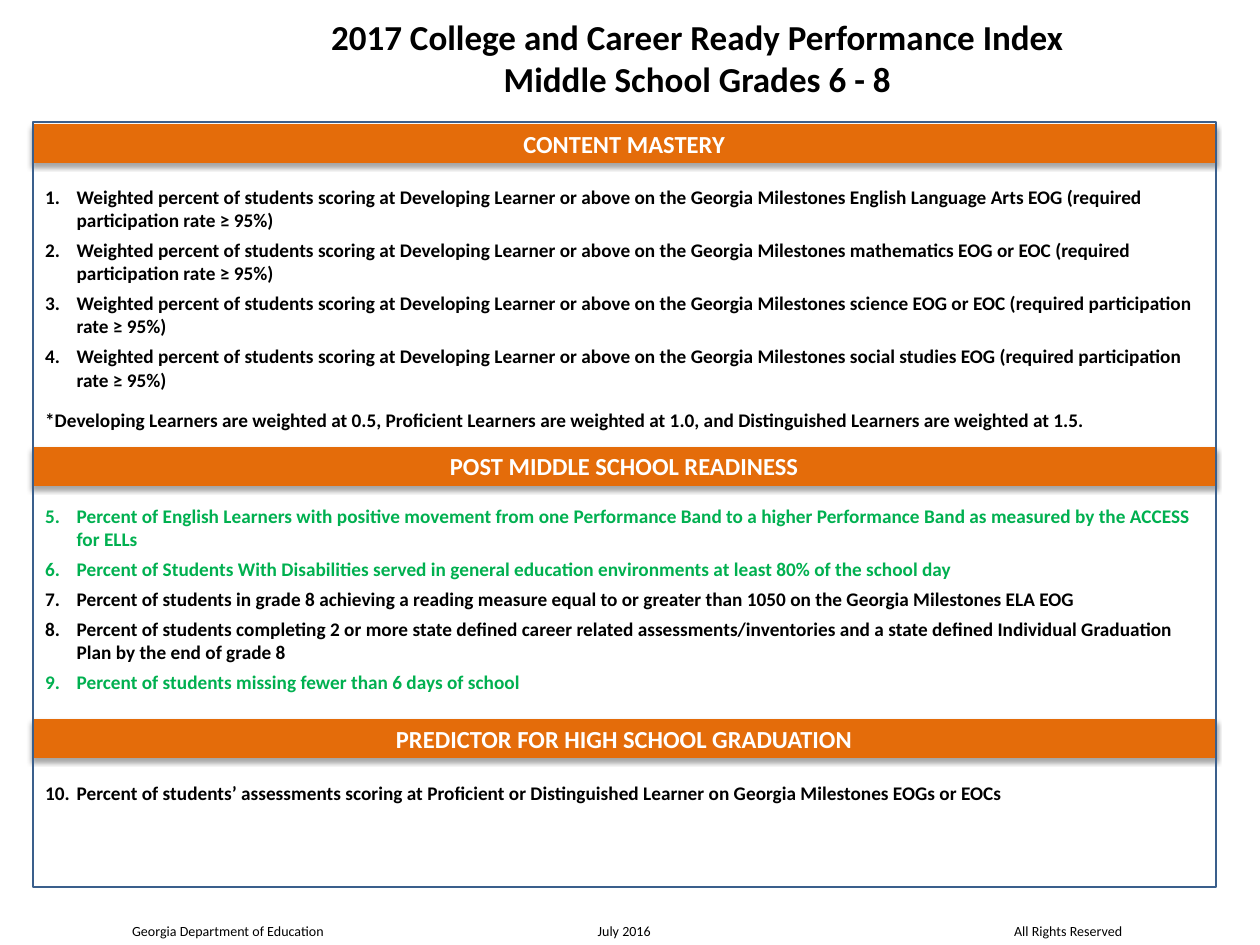
import dataclasses

import lxml.etree
import pptx
import pptx.dml.color
import pptx.enum.shapes
import pptx.enum.text
import pptx.oxml.ns
import pptx.util

Pt = pptx.util.Pt
RGB = pptx.dml.color.RGBColor.from_string
ALIGN = pptx.enum.text.PP_ALIGN
ANCHOR = pptx.enum.text.MSO_ANCHOR
RECT = pptx.enum.shapes.MSO_SHAPE.RECTANGLE
qn = pptx.oxml.ns.qn


@dataclasses.dataclass(frozen=True)
class Theme:
    """Colours, font and type sizes of the slide."""
    font: str = "Calibri"
    ink: str = "000000"
    white: str = "FFFFFF"
    band: str = "E46C0A"
    green: str = "00B050"
    frame: str = "3A5F8C"
    title: float = 20
    heading: float = 14
    body: float = 11
    footer: float = 8


T = Theme()
MILESTONES = "Weighted percent of students scoring at Developing Learner or above on the Georgia Milestones "
RATE = " (required participation rate ≥ 95%)"
SUBJECTS = ["English Language Arts EOG", "mathematics EOG or EOC", "science EOG or EOC", "social studies EOG"]
SECTIONS = [
    ("CONTENT MASTERY", 71.3, 30.9, 1, [(MILESTONES + name + RATE, T.ink) for name in SUBJECTS],
     "*Developing Learners are weighted at 0.5, Proficient Learners are weighted at 1.0, "
     "and Distinguished Learners are weighted at 1.5."),
    ("POST MIDDLE SCHOOL READINESS", 255.6, 28.8, 5, [
        ("Percent of English Learners with positive movement from one Performance Band to a higher "
         "Performance Band as measured by the ACCESS for ELLs", T.green),
        ("Percent of Students With Disabilities served in general education environments "
         "at least 80% of the school day", T.green),
        ("Percent of students in grade 8 achieving a reading measure equal to or greater than 1050 "
         "on the Georgia Milestones ELA EOG", T.ink),
        ("Percent of students completing 2 or more state defined career related assessments/inventories "
         "and a state defined Individual Graduation Plan by the end of grade 8", T.ink),
        ("Percent of students missing fewer than 6 days of school", T.green)], None),
    ("PREDICTOR FOR HIGH SCHOOL GRADUATION", 411.1, 31.7, 10, [
        ("Percent of students’ assessments scoring at Proficient or Distinguished Learner "
         "on Georgia Milestones EOGs or EOCs", T.ink)], None),
]


def add_run(p, text, size, color, bold=True):
    """Add one formatted run to a paragraph."""
    r = p.add_run()
    r.text = text
    r.font.name, r.font.size, r.font.bold = T.font, Pt(size), bold
    r.font.color.rgb = RGB(color)


def add_title(s, lines, x, y, w, h):
    """Place the title placeholder in its box."""
    sp = s.shapes.title
    sp.left, sp.top, sp.width, sp.height = Pt(x), Pt(y), Pt(w), Pt(h)
    tf = sp.text_frame
    tf.auto_size = pptx.enum.text.MSO_AUTO_SIZE.NONE
    tf.vertical_anchor = ANCHOR.MIDDLE
    p = tf.paragraphs[0]
    p.alignment = ALIGN.CENTER
    for i, line in enumerate(lines):
        if i:
            p.add_line_break()
        add_run(p, line, T.title, T.ink)


def add_rect(s, x, y, w, h, line, weight):
    """Add an unfilled, shadowless rectangle."""
    sp = s.shapes.add_shape(RECT, Pt(x), Pt(y), Pt(w), Pt(h))
    sp.shadow.inherit = False
    sp.fill.background()
    sp.line.color.rgb = RGB(line)
    sp.line.width = Pt(weight)
    return sp


def add_band(s, heading, x, y, w, h):
    """Add a heading band with a soft shadow below it."""
    sp = add_rect(s, x, y, w, h, T.band, 0.75)
    sp.fill.solid()
    sp.fill.fore_color.rgb = RGB(T.band)
    effects = sp.element.spPr.find(qn("a:effectLst"))
    shadow = lxml.etree.SubElement(effects, qn("a:outerShdw"), blurRad=str(Pt(3.1)), dist=str(Pt(1.8)),
                                   dir="5400000", rotWithShape="0")
    color = lxml.etree.SubElement(shadow, qn("a:srgbClr"), val=T.ink)
    lxml.etree.SubElement(color, qn("a:alpha"), val="35000")
    tf = sp.text_frame
    tf.vertical_anchor = ANCHOR.MIDDLE
    p = tf.paragraphs[0]
    p.alignment = ALIGN.CENTER
    add_run(p, heading, T.heading, T.white)


def add_items(s, items, start, note, x, y, w, h):
    """Add a numbered list and an optional closing note."""
    tf = s.shapes.add_textbox(Pt(x), Pt(y), Pt(w), Pt(h)).text_frame
    tf.word_wrap = True
    for i, (text, color) in enumerate(items):
        p = tf.add_paragraph() if i else tf.paragraphs[0]
        p.space_after = Pt(4)
        pPr = p._p.get_or_add_pPr()
        pPr.set("marL", str(Pt(18)))
        pPr.set("indent", str(Pt(-18)))
        lxml.etree.SubElement(pPr, qn("a:buFont"), typeface="+mj-lt")
        lxml.etree.SubElement(pPr, qn("a:buAutoNum"), type="arabicPeriod", startAt=str(start))
        add_run(p, text, T.body, color)
    if note:
        p = tf.add_paragraph()
        p.space_before, p.space_after = Pt(6), Pt(4)
        add_run(p, note, T.body, T.ink)


def add_section(s, heading, start, items, note, gap, x, y, w, h):
    """Add a heading band with its list below."""
    add_band(s, heading, x, y, w, 21.6)
    add_items(s, items, start, note, x, y + gap, w + 4, h - gap)


def add_footer(s, parts, x, y, w, h):
    """Add the footer line with left, centre and right parts."""
    tf = s.shapes.add_textbox(Pt(x), Pt(y), Pt(w), Pt(h)).text_frame
    tf.word_wrap = True
    tf.vertical_anchor = ANCHOR.MIDDLE
    tf.margin_left = tf.margin_right = 0
    p = tf.paragraphs[0]
    p.alignment = ALIGN.LEFT
    tabs = lxml.etree.SubElement(p._p.get_or_add_pPr(), qn("a:tabLst"))
    for pos, kind in ((w / 2 - 2, "ctr"), (w - 0.5, "r")):
        lxml.etree.SubElement(tabs, qn("a:tab"), pos=str(Pt(pos)), algn=kind)
    add_run(p, "\t".join(parts), T.footer, T.ink, False)


def main():
    """Build and save the slide."""
    prs = pptx.Presentation()
    prs.slide_width, prs.slide_height = Pt(720), Pt(540)
    s = prs.slides.add_slide(prs.slide_layouts[5])
    x, y, w, h = 18.7, 69.8, 676, 437
    add_title(s, ["2017 College and Career Ready Performance Index", "Middle School Grades 6 - 8"],
              155.5, 0.7, 486, 64.8)
    bottoms = [section[1] for section in SECTIONS[1:]] + [y + h]
    for (heading, top, gap, start, items, note), bottom in zip(SECTIONS, bottoms):
        add_section(s, heading, start, items, note, gap, x, top, w, bottom - top)
    add_rect(s, x, y, w, h, T.frame, 1)
    add_footer(s, ["Georgia Department of Education", "July 2016", "All Rights Reserved"],
               75.5, 523.4, 566.5, 16.6)
    prs.save("out.pptx")


if __name__ == "__main__":
    main()
